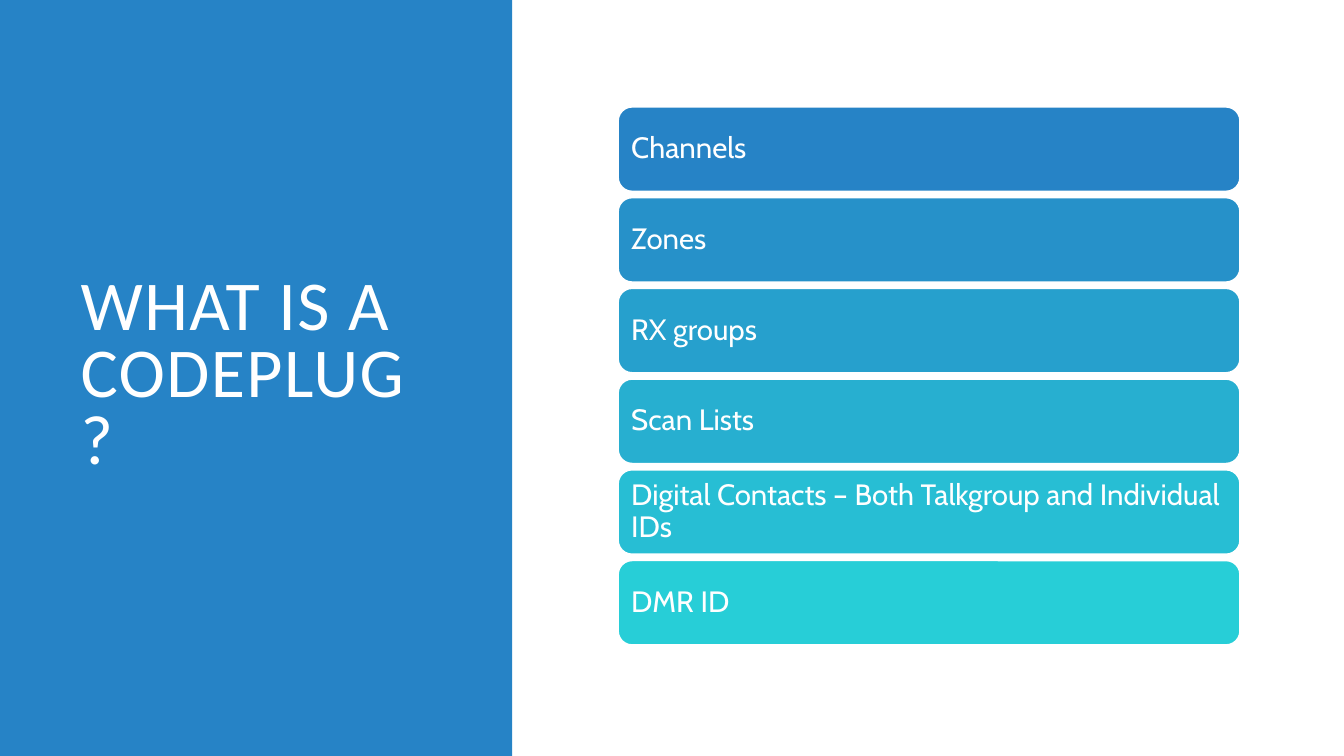
from pptx import Presentation
from pptx.dml.color import RGBColor
from pptx.enum.shapes import MSO_SHAPE
from pptx.enum.text import MSO_ANCHOR, MSO_AUTO_SIZE, PP_ALIGN
from pptx.util import Inches, Pt

RECT = MSO_SHAPE.RECTANGLE
ROUNDED = MSO_SHAPE.ROUNDED_RECTANGLE
MIDDLE = MSO_ANCHOR.MIDDLE
LEFT = PP_ALIGN.LEFT
NO_AUTOFIT = MSO_AUTO_SIZE.NONE

COLORS = {"panel": "2683C6", "white": "FFFFFF"}
PARTS = [
    ("Channels", "2683C6"),
    ("Zones", "2691C9"),
    ("RX groups", "26A0CD"),
    ("Scan Lists", "27AFD0"),
    ("Digital Contacts – Both Talkgroup and Individual IDs", "27BED4"),
    ("DMR ID", "27CED7"),
]
BAR_TOP, BAR_STEP = 1.06, 0.9


def rgb(value):
    return RGBColor.from_string(value)


def add_filled_shape(slide, kind, left, top, width, height, color):
    sp = slide.shapes.add_shape(
        kind, Inches(left), Inches(top), Inches(width), Inches(height))
    sp.shadow.inherit = False
    sp.fill.solid()
    sp.fill.fore_color.rgb = rgb(color)
    sp.line.fill.background()
    return sp


def set_text(sp, text, font, size, line_spacing):
    """Fill a shape with one left-aligned, vertically centred white paragraph."""
    tf = sp.text_frame
    tf.text = text
    tf.word_wrap = True
    tf.auto_size = NO_AUTOFIT
    tf.vertical_anchor = MIDDLE
    p = tf.paragraphs[0]
    p.alignment = LEFT
    p.line_spacing = line_spacing
    r = p.runs[0]
    r.font.name = font
    r.font.size = Pt(size)
    r.font.color.rgb = rgb(COLORS["white"])
    return r


def add_panel(slide):
    """Add the left panel behind everything else."""
    sp = add_filled_shape(slide, RECT, 0, 0, 5.08, 7.5, COLORS["panel"])
    slide.shapes._spTree.insert(2, sp._element)


def format_title(slide, text):
    title = slide.shapes.title
    title.left, title.top = Inches(0.7), Inches(0.7)
    title.width, title.height = Inches(3.74), Inches(6.09)
    r = set_text(title, text, "Calibri", 50, 0.8)
    r.font._element.set("spc", "100")


def add_bar(slide, top, text, color):
    sp = add_filled_shape(slide, ROUNDED, 6.13, top, 6.17, 0.84, color)
    sp.line.color.rgb = rgb(COLORS["white"])
    sp.line.width = Pt(1.25)
    tf = sp.text_frame
    tf.margin_left = tf.margin_right = Inches(0.09)
    tf.margin_top = tf.margin_bottom = Inches(0.09)
    set_text(sp, text, "Cabin", 21, 0.9)


def main():
    prs = Presentation()
    prs.slide_width, prs.slide_height = Inches(13.33), Inches(7.5)
    slide = prs.slides.add_slide(prs.slide_layouts[5])
    add_panel(slide)
    format_title(slide, "WHAT IS A CODEPLUG?")
    for i, (text, color) in enumerate(PARTS):
        add_bar(slide, BAR_TOP + i * BAR_STEP, text, color)
    prs.save("out.pptx")


if __name__ == "__main__":
    main()
